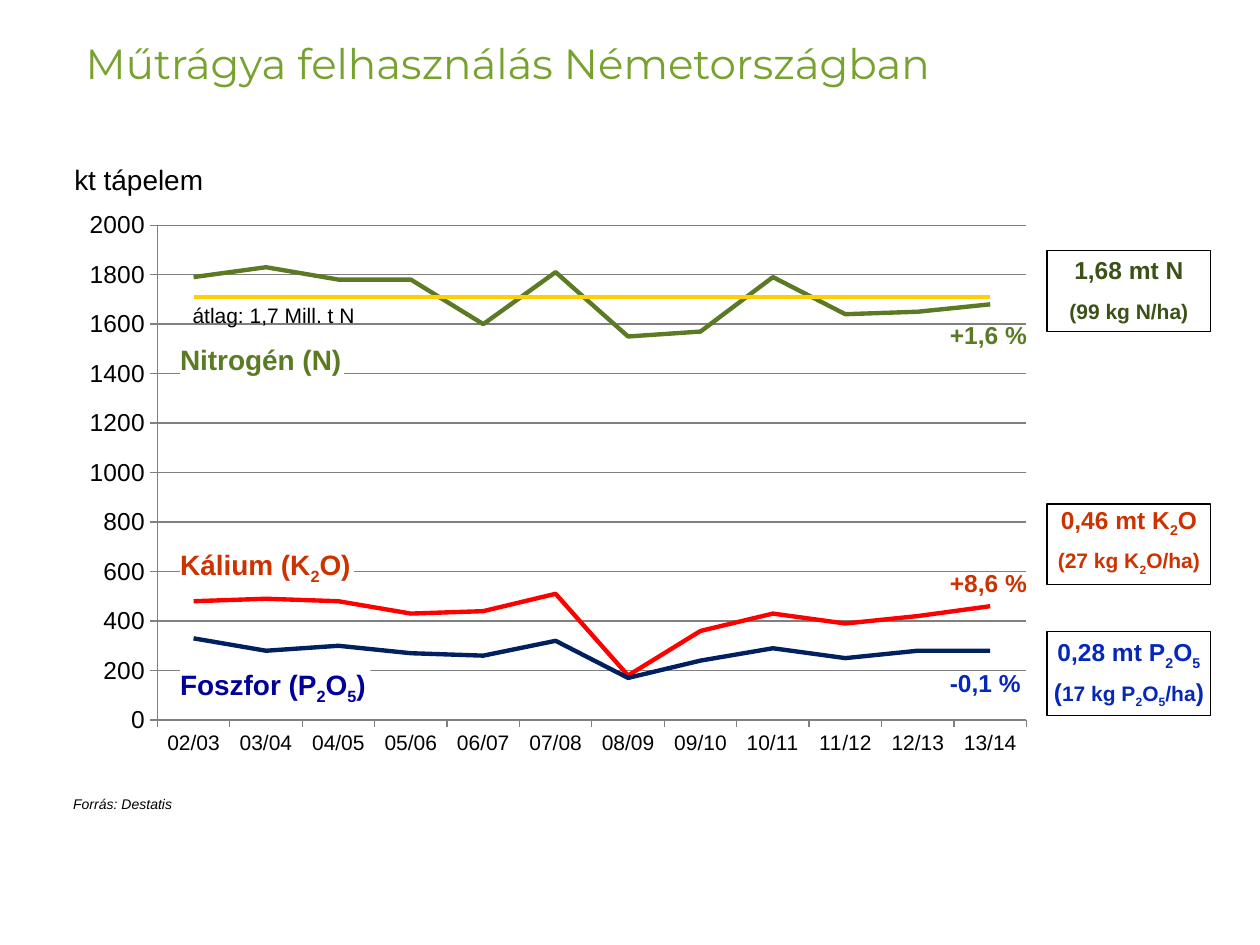
from lxml.etree import SubElement
from pptx import Presentation
from pptx.chart.data import CategoryChartData
from pptx.dml.color import RGBColor
from pptx.enum.chart import XL_CHART_TYPE, XL_TICK_MARK
from pptx.enum.shapes import MSO_SHAPE
from pptx.enum.text import MSO_ANCHOR, PP_ALIGN
from pptx.oxml.ns import qn
from pptx.util import Inches, Pt

COLORS = {
    "title": "78A22F", "black": "000000", "white": "FFFFFF", "grid": "808080",
    "nitrogen": "5A7A23", "nitrogen dark": "3C5117",
    "potash line": "FF0000", "potash": "CC3300",
    "phosphate line": "002060", "phosphate": "0628BA", "phosphate label": "000099",
    "average": "FFCF01",
}

TITLE = "Műtrágya felhasználás Németországban"
YEARS = [f"{year:02}/{year + 1:02}" for year in range(2, 14)]
SERIES = [
    ("Nitrogén", "nitrogen",
     [1790, 1830, 1780, 1780, 1600, 1810, 1550, 1570, 1790, 1640, 1650, 1680]),
    ("Kálium", "potash line",
     [480, 490, 480, 430, 440, 510, 180, 360, 430, 390, 420, 460]),
    ("Foszfor", "phosphate line",
     [330, 280, 300, 270, 260, 320, 170, 240, 290, 250, 280, 280]),
    ("Átlag", "average", [1710] * len(YEARS)),
]
PLOT = {"x": 0.112, "y": 0.065, "w": 0.859, "h": 0.805}

# Text between a pair of underscores is subscript.
# Nutrient names: text, colour, top, width
NUTRIENTS = [
    ("Nitrogén (N)", "nitrogen", 2.67, 1.3),
    ("Kálium (K_2_O)", "potash", 4.3, 1.38),
    ("Foszfor (P_2_O_5_)", "phosphate label", 5.25, 1.51),
]
# Changes: text, colour, top
CHANGES = [
    ("+1,6 %", "nitrogen", 2.49),
    ("+8,6 %", "potash", 4.46),
    ("-0,1 %", "phosphate", 5.25),
]
# Totals: colour, top, height, line spacing of first line, lines of (text, size)
TOTALS = [
    ("nitrogen dark", 1.99, 0.64, 16,
     [[("1,68 mt N", 14)], [("(99 kg N/ha)", 12)]]),
    ("potash", 4, 0.64, 16,
     [[("0,46 mt K_2_O", 14)], [("(27 kg K_2_O/ha)", 12)]]),
    ("phosphate", 5.01, 0.67, None,
     [[("0,28 mt P_2_O_5_", 14)],
      [("(", 14), ("17 kg P_2_O_5_/ha", 12), (")", 14)]]),
]


def rgb(name):
    return RGBColor.from_string(COLORS[name])


def format_font(font, color, size, **values):
    font.color.rgb = rgb(color)
    for key, value in {"name": "Arial", "size": Pt(size), **values}.items():
        setattr(font, key, value)


def add_spans(para, text, color, size, **values):
    for index, part in enumerate(text.split("_")):
        if part:
            span = para.add_run()
            span.text = part
            format_font(span.font, color, size, **values)
            if index % 2:
                span.font._element.set("baseline", "-25000")


def set_frame(box, side, edge, right=None):
    frame = box.text_frame
    frame.word_wrap = False
    frame.vertical_anchor = MSO_ANCHOR.TOP
    frame.margin_left = Inches(side)
    frame.margin_right = Inches(side if right is None else right)
    frame.margin_top = frame.margin_bottom = Inches(edge)
    return frame


def add_label(page, place, text, color, size, side=0.1, edge=0.05, right=None, **values):
    box = page.shapes.add_textbox(*map(Inches, place))
    frame = set_frame(box, side, edge, right)
    add_spans(frame.paragraphs[0], text, color, size, **values)
    return box


def add_line_chart(page):
    data = CategoryChartData()
    data.categories = YEARS
    for name, _, values in SERIES:
        data.add_series(name, values)
    place = map(Inches, (0.35, 1.47, 8.03, 4.88))
    chart = page.shapes.add_chart(XL_CHART_TYPE.LINE, *place, data).chart
    chart.has_legend = chart.has_title = False
    format_font(chart.font, "black", 18)

    for series, (_, color, _) in zip(chart.plots[0].series, SERIES):
        series.smooth = False
        series.format.line.color.rgb = rgb(color)
        series.format.line.width = Pt(2.5)

    values_axis, years_axis = chart.value_axis, chart.category_axis
    values_axis.minimum_scale, values_axis.maximum_scale = 0, 2000
    values_axis.major_unit = 200
    values_axis.has_major_gridlines = True
    for axis, size in ((values_axis, 14), (years_axis, 12)):
        axis.major_tick_mark = XL_TICK_MARK.OUTSIDE
        format_font(axis.tick_labels.font, "black", size)
    for part in (values_axis, years_axis, values_axis.major_gridlines):
        part.format.line.color.rgb = rgb("grid")
        part.format.line.width = Pt(0.75)

    # Fixed inner plot area
    area = chart._chartSpace.chart.plotArea
    for old in area.findall(qn("c:layout")):
        area.remove(old)
    layout = SubElement(area, qn("c:layout"))
    area.insert(0, layout)
    manual = SubElement(layout, qn("c:manualLayout"))
    settings = {"layoutTarget": "inner", "xMode": "edge", "yMode": "edge", **PLOT}
    for tag, value in settings.items():
        SubElement(manual, qn(f"c:{tag}")).set("val", str(value))


def add_total(page, color, top, height, first_spacing, lines):
    box = page.shapes.add_shape(
        MSO_SHAPE.RECTANGLE, *map(Inches, (8.31, top, 1.3, height)))
    box.shadow.inherit = False
    box.fill.solid()
    box.fill.fore_color.rgb = rgb("white")
    box.line.color.rgb = rgb("black")
    box.line.width = Pt(0.75)
    frame = set_frame(box, 0, 0.05)
    for index, line in enumerate(lines):
        para = frame.add_paragraph() if index else frame.paragraphs[0]
        para.alignment = PP_ALIGN.CENTER
        para.space_after = Pt(3)
        if index:
            para.space_before = Pt(3)
        spacing = 16 if index else first_spacing
        if spacing:
            para.line_spacing = Pt(spacing)
        for text, size in line:
            add_spans(para, text, color, size, bold=True)


def main():
    deck = Presentation()
    deck.slide_width, deck.slide_height = Inches(10), Inches(7.5)
    page = deck.slides.add_slide(deck.slide_layouts[5])

    # Title
    title = page.shapes.title
    title.left, title.top, title.width, title.height = map(
        Inches, (0.58, 0.25, 8.83, 0.93))
    frame = set_frame(title, 0.1, 0.05)
    frame.word_wrap = True
    frame.paragraphs[0].alignment = PP_ALIGN.LEFT
    add_spans(frame.paragraphs[0], TITLE, "title", 24, name="Montserrat")

    # Chart with its unit and labels
    add_line_chart(page)
    add_label(page, (0.59, 1.24, 1.1, 0.37), "kt tápelem", "black", 16, side=0)
    for text, color, top, width in NUTRIENTS:
        box = add_label(page, (1.43, top, width, 0.37), text, color, 16, side=0, bold=True)
        box.fill.solid()
        box.fill.fore_color.rgb = rgb("white")
    add_label(page, (1.43, 2.35, 1.5, 0.3), "átlag: 1,7 Mill. t N", "black", 12)

    # Totals and changes on the right
    for total in TOTALS:
        add_total(page, *total)
    for text, color, top in CHANGES:
        add_label(page, (7.44, top, 0.98, 0.34), text, color, 14, bold=True)

    # Source
    add_label(page, (0.58, 6.27, 0.91, 0.21), "Forrás: Destatis", "black", 8,
              side=0, edge=0.04, right=0.12, italic=True)
    deck.save("out.pptx")


if __name__ == "__main__":
    main()
